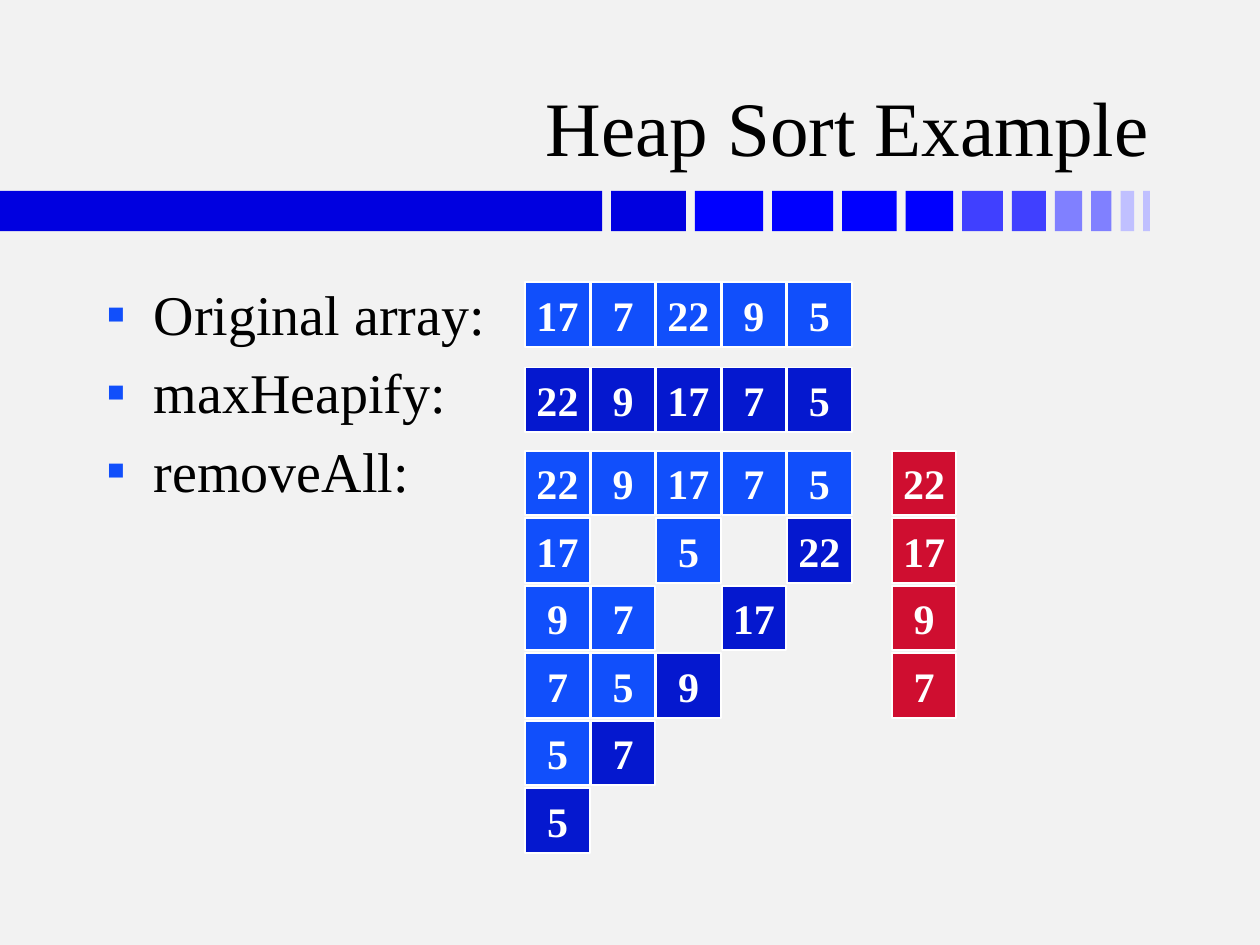
from lxml import etree
from pptx import Presentation
from pptx import util as u
from pptx.dml.color import RGBColor
from pptx.enum import shapes, text
from pptx.oxml import ns

COLORS = {
    "background": "F2F2F2", "text": "000000", "white": "FFFFFF",
    "heap": "114FFB", "sorted": "0518CF", "removed": "CF0E30",
    "bar1": "0000E0", "bar2": "0000FF", "bar3": "4040FF",
    "bar4": "8080FF", "bar5": "C0C0FF",
}
BAR_SHADES = ["bar1"] + ["bar2"] * 4 + ["bar3"] * 2 + ["bar4"] * 2 + ["bar5"] * 2
BAR_LEFT, BAR_WIDTH, BAR_GAP = 12.32, 1.51, 0.18
CELL_LEFT, CELL_STEP, CELL_SIZE = 10.59, 1.32, 1.3
REMOVED_LEFT = 17.98
ARRAY_TOP, HEAPIFY_TOP, REMOVE_TOP, REMOVE_STEP = 5.69, 7.41, 9.09, 1.36
REMOVALS = [
    (["22", "9", "17", "7", "5"], None, "22"),
    (["17", None, "5"], "22", "17"),
    (["9", "7"], "17", "9"),
    (["7", "5"], "9", "7"),
    (["5"], "7", None),
    ([], "5", None),
]


class SlideWriter:
    font = "Times New Roman"

    def __init__(self, page):
        self.page = page
        fill = page.background.fill
        fill.solid()
        fill.fore_color.rgb = self.color("background")

    def color(self, name):
        return RGBColor.from_string(COLORS[name])

    def format(self, para, size, color="text", bold=False):
        for span in para.runs:
            span.font.name = self.font
            span.font.size = u.Pt(size)
            span.font.bold = bold
            span.font.color.rgb = self.color(color)

    def place(self, box, left, top, width, height):
        box.left, box.top = u.Cm(left), u.Cm(top)
        box.width, box.height = u.Cm(width), u.Cm(height)

    def title(self, words, *place):
        box = self.page.shapes.title
        self.place(box, *place)
        frame = box.text_frame
        frame.text = words
        frame.vertical_anchor = text.MSO_ANCHOR.BOTTOM
        para = frame.paragraphs[0]
        para.alignment = text.PP_ALIGN.RIGHT
        self.format(para, 44)

    def bullets(self, items, left, top, width, height):
        box = self.page.shapes.add_textbox(*map(u.Cm, (left, top, width, height)))
        frame = box.text_frame
        frame.word_wrap = True
        frame.text = "\n".join(items)
        for para in frame.paragraphs:
            self.format(para, 32)
            props = para._p.get_or_add_pPr()
            props.set("marL", str(u.Cm(0.95)))
            props.set("indent", str(-u.Cm(0.95)))
            spacing = etree.SubElement(props, ns.qn("a:spcBef"))
            etree.SubElement(spacing, ns.qn("a:spcPct"), val="20000")
            tint = etree.SubElement(props, ns.qn("a:buClr"))
            etree.SubElement(tint, ns.qn("a:srgbClr"), val=COLORS["heap"])
            etree.SubElement(props, ns.qn("a:buFont"), typeface=self.font)
            etree.SubElement(props, ns.qn("a:buChar"), char="▪")

    def bar(self, left, width, color):
        return self.rectangle(left, 3.85, width, 0.81, color)

    def rectangle(self, left, top, width, height, color):
        box = self.page.shapes.add_shape(
            shapes.MSO_SHAPE.RECTANGLE, *map(u.Cm, (left, top, width, height)))
        box.shadow.inherit = False
        box.fill.solid()
        box.fill.fore_color.rgb = self.color(color)
        box.line.fill.background()
        return box

    def cell(self, value, left, top, color):
        box = self.rectangle(left, top, CELL_SIZE, CELL_SIZE, color)
        box.line.color.rgb = self.color("white")
        box.line.width = u.Pt(1)
        frame = box.text_frame
        frame.word_wrap = False
        frame.vertical_anchor = text.MSO_ANCHOR.MIDDLE
        frame.text = value
        para = frame.paragraphs[0]
        para.alignment = text.PP_ALIGN.CENTER
        self.format(para, 24, "white", True)

    def array(self, values, top, color):
        for column, value in enumerate(values):
            if value:
                self.cell(value, CELL_LEFT + column * CELL_STEP, top, color)


def main():
    deck = Presentation()
    deck.slide_width, deck.slide_height = u.Cm(25.4), u.Cm(19.05)
    writer = SlideWriter(deck.slides.add_slide(deck.slide_layouts[5]))

    writer.bar(0, BAR_LEFT - BAR_GAP, "bar1")
    left = BAR_LEFT
    count = len(BAR_SHADES)
    for index, shade in enumerate(BAR_SHADES):
        width = BAR_WIDTH * (count - index) / count
        writer.bar(left, width, shade)
        left += width + BAR_GAP

    writer.title("Heap Sort Example", 1.88, 0.48, 21.54, 3.12)
    writer.bullets(["Original array:", "maxHeapify:", "removeAll:"],
                   1.9, 5.51, 21.59, 11.43)

    writer.array(["17", "7", "22", "9", "5"], ARRAY_TOP, "heap")
    writer.array(["22", "9", "17", "7", "5"], HEAPIFY_TOP, "sorted")
    for row, (heap, placed, removed) in enumerate(REMOVALS):
        top = REMOVE_TOP + row * REMOVE_STEP
        writer.array(heap, top, "heap")
        if placed:
            column = len(REMOVALS) - 1 - row
            writer.cell(placed, CELL_LEFT + column * CELL_STEP, top, "sorted")
        if removed:
            writer.cell(removed, REMOVED_LEFT, top, "removed")

    deck.save("out.pptx")


if __name__ == "__main__":
    main()
